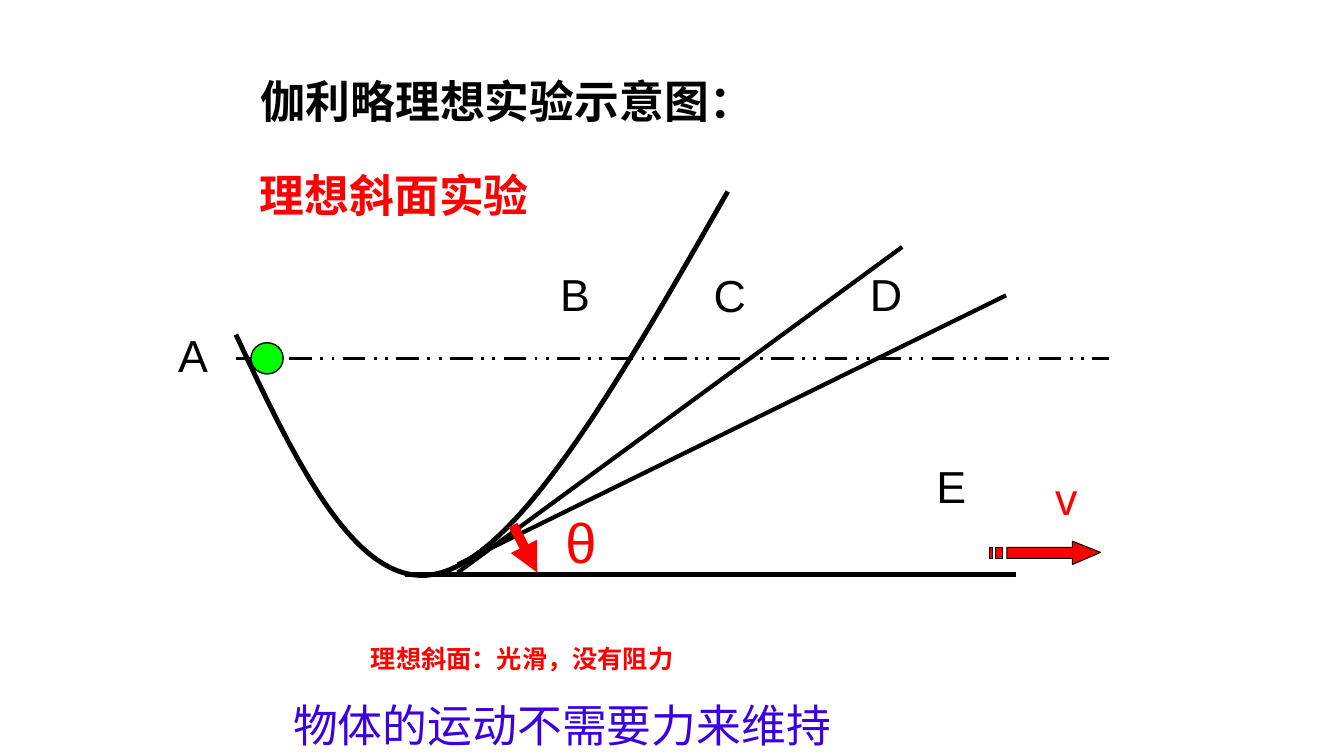
import pptx
import pptx.util
import pptx.dml.color
import pptx.enum.dml
import pptx.enum.shapes
import pptx.enum.text
import pptx.oxml
import pptx.oxml.ns

Pt = pptx.util.Pt
BLACK, RED, GREEN, VIOLET = "000000", "FF0000", "00FF00", "3B00E2"
SANS, CJK_SC, CJK_JP = "Arial", "Noto Sans CJK SC", "Noto Sans CJK JP"


def colour(value):
    return pptx.dml.color.RGBColor.from_string(value)


def add_child(parent, tag, **attributes):
    child = pptx.oxml.parse_xml(f"<{tag} {pptx.oxml.ns.nsdecls('a')}/>")
    for name, value in attributes.items():
        child.set(name, value)
    parent.append(child)


def add_text(slide, box, text, size=32, color=BLACK, latin=SANS, asian=None,
             bold=False, wrap=True, anchor="TOP", line_spacing=None):
    frame = slide.shapes.add_textbox(*map(Pt, box)).text_frame
    frame.word_wrap = wrap
    frame.vertical_anchor = getattr(pptx.enum.text.MSO_ANCHOR, anchor)
    paragraph = frame.paragraphs[0]
    paragraph.text = text
    paragraph.line_spacing = line_spacing
    font = paragraph.font
    font.size = Pt(size)
    font.bold = bold
    font.color.rgb = colour(color)
    font.name = latin
    if asian:
        properties = paragraph._p.find(".//" + pptx.oxml.ns.qn("a:defRPr"))
        add_child(properties, "a:ea", typeface=asian)


def add_line(slide, start, end, width=3, color=BLACK, dashed=False, arrow=False):
    line = slide.shapes.add_connector(
        pptx.enum.shapes.MSO_CONNECTOR.STRAIGHT, *map(Pt, start + end))
    line.line.width = Pt(width)
    line.line.color.rgb = colour(color)
    if dashed:
        line.line.dash_style = pptx.enum.dml.MSO_LINE.DASH_DOT_DOT
    if arrow:
        add_child(line.line._get_or_add_ln(), "a:tailEnd", type="triangle")
    add_child(line._element.spPr, "a:effectLst")


def paint(shape, fill, width):
    shape.shadow.inherit = False
    if fill:
        shape.fill.solid()
        shape.fill.fore_color.rgb = colour(fill)
    else:
        shape.fill.background()
    shape.line.color.rgb = colour(BLACK)
    shape.line.width = Pt(width)


def add_outline(slide, contours, width, fill=None):
    closed = fill is not None
    builder = slide.shapes.build_freeform(*map(Pt, contours[0][0]))
    for index, (start, *rest) in enumerate(contours):
        if index:
            builder.move_to(*map(Pt, start))
        builder.add_line_segments([tuple(map(Pt, point)) for point in rest], close=closed)
    paint(builder.convert_to_shape(), fill, width)


def bezier(points, steps=32):
    weights = (1, 3, 3, 1)
    return [
        tuple(sum(weight * (1 - t) ** (3 - k) * t ** k * point[axis]
                  for k, (weight, point) in enumerate(zip(weights, points)))
              for axis in (0, 1))
        for t in (step / steps for step in range(steps + 1))]


def add_track(slide):
    valley = (315.4, 409)
    descent = bezier([(168.5, 239), (212.4, 332.6), (257, 426.2), valley])
    ascent = bezier([valley, (374.4, 391.7), (447.1, 264.2), (519.8, 136.8)])
    add_outline(slide, [descent + ascent[1:]], 3.5)


def add_velocity_arrow(slide):
    top, bottom = 391, 398.9
    head = [(766.1, 386.6), (766.1, top), (719.3, top), (719.3, bottom),
            (766.1, bottom), (766.1, 403.2), (786.2, 394.6)]
    stripes = [[(left, top), (left, bottom), (right, bottom), (right, top)]
               for left, right in ((711.4, 716.4), (707, 709.2))]
    add_outline(slide, [head] + stripes, 0.75, RED)


def add_ball(slide, box):
    ball = slide.shapes.add_shape(pptx.enum.shapes.MSO_SHAPE.OVAL, *map(Pt, box))
    paint(ball, GREEN, 1)


def main():
    deck = pptx.Presentation()
    deck.slide_width, deck.slide_height = Pt(960), Pt(540)
    slide = deck.slides.add_slide(deck.slide_layouts[6])

    add_text(slide, (178.6, 112.3, 324, 57.6), "理想斜面实验", color=RED, latin=CJK_SC,
             asian=CJK_SC, bold=True, anchor="MIDDLE", line_spacing=0.9)
    add_track(slide)
    for start, end in (((326.9, 409), (644.4, 176.4)),
                       ((326.9, 403.2), (718.6, 211)),
                       ((289.4, 410.4), (725.8, 410.4))):
        add_line(slide, start, end)
    add_line(slide, (168.5, 256.3), (792, 256.3), 2, dashed=True)
    add_velocity_arrow(slide)

    for label, left, top, width in (("A", 120.2, 230.4, 31), ("B", 393.1, 187.2, 36),
                                    ("C", 502.6, 187.9, 37.4), ("D", 614.2, 187.2, 37.4),
                                    ("E", 661.7, 324, 35.3)):
        add_text(slide, (left, top, width, 46), label, wrap=False)
    add_ball(slide, (179.3, 244.8, 23, 22.3))
    add_text(slide, (746.6, 332.6, 30.2, 46), "v", color=RED, wrap=False)
    add_line(slide, (366.5, 375.1), (383.8, 409), 7, RED, dashed=True, arrow=True)
    add_text(slide, (396.7, 359.3, 36.7, 55.4), "θ", 40, RED, wrap=False)

    add_text(slide, (202.3, 494.6, 450, 46), "物体的运动不需要力来维持", color=VIOLET,
             asian=CJK_SC)
    add_text(slide, (179.3, 49, 473, 46), "伽利略理想实验示意图：", latin=CJK_JP,
             asian=CJK_JP, bold=True)
    add_text(slide, (257.8, 455.8, 231.8, 28.8), "理想斜面：光滑，没有阻力", 18, RED,
             CJK_SC, CJK_SC, bold=True, wrap=False)
    deck.save("out.pptx")


if __name__ == "__main__":
    main()
